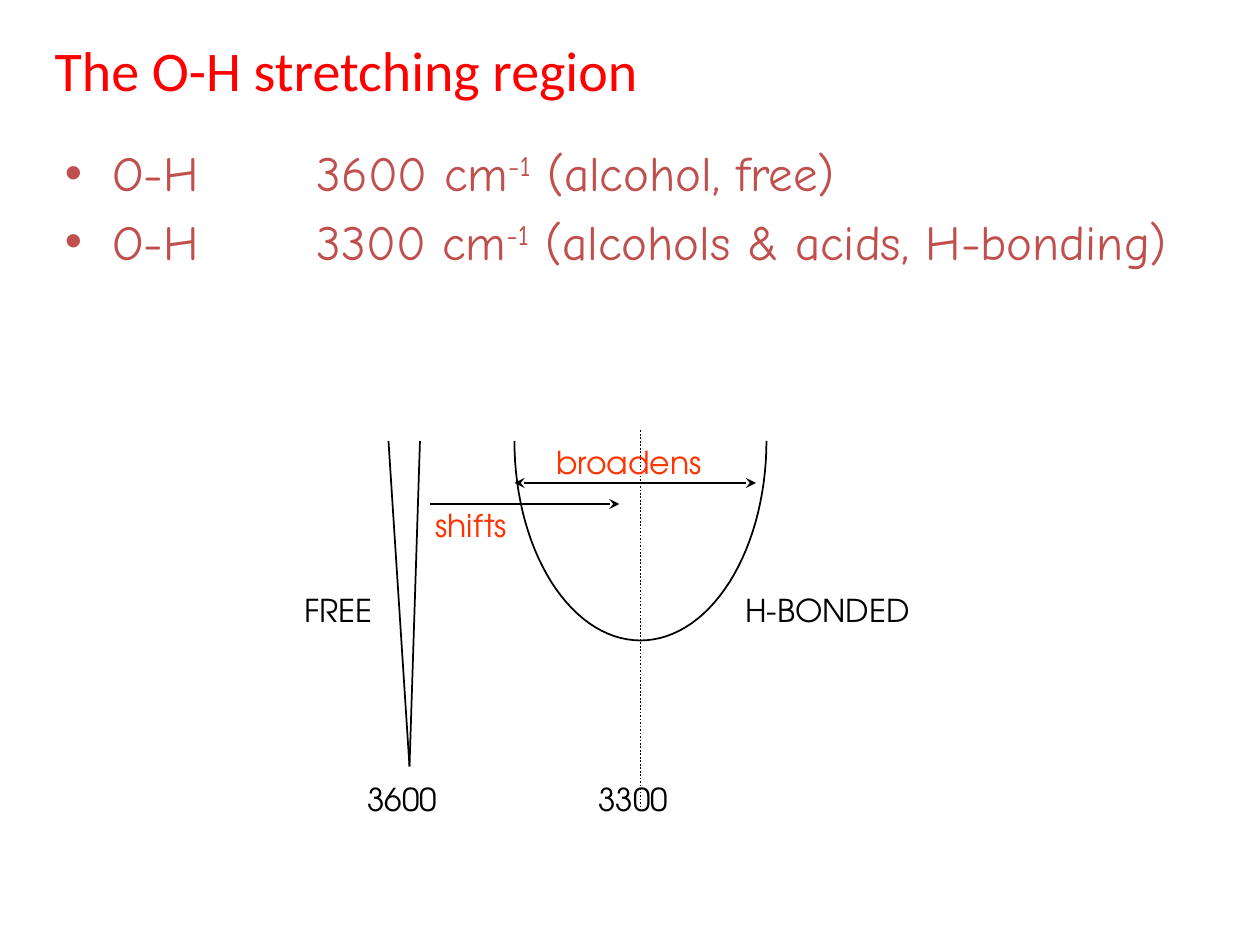
from dataclasses import dataclass
from math import cos, pi, sin

from lxml.etree import SubElement
from pptx import Presentation
from pptx.dml.color import RGBColor
from pptx.enum.dml import MSO_LINE_DASH_STYLE as Dash
from pptx.enum.shapes import MSO_CONNECTOR as Connector
from pptx.enum.text import MSO_ANCHOR as Anchor, PP_ALIGN as Align
from pptx.oxml.ns import qn
from pptx.util import Emu, Pt

PX = 7620  # 120 px to the inch

BLACK = RGBColor(0x00, 0x00, 0x00)
RED = RGBColor(0xFF, 0x00, 0x00)
ORANGE = RGBColor(0xFF, 0x33, 0x00)
BRICK = RGBColor(0xC0, 0x50, 0x4D)


@dataclass(frozen=True)
class Label:
    text: str
    x: int
    y: int
    w: int
    color: RGBColor = BLACK


@dataclass(frozen=True)
class Line:
    x1: int
    y1: int
    x2: int
    y2: int
    dash: Dash | None = None
    arrows: tuple[str, ...] = ()


@dataclass(frozen=True)
class Band:
    wavenumber: str
    note: str


LINES = [
    Line(370, 420, 390, 730),
    Line(390, 730, 400, 420),
    Line(610, 410, 610, 770, dash=Dash.ROUND_DOT),
    Line(410, 480, 590, 480, arrows=("tailEnd",)),
    Line(490, 460, 720, 460, arrows=("headEnd", "tailEnd")),
]
LABELS = [
    Label("3600", 338, 737, 96),
    Label("3300", 558, 737, 96),
    Label("H-BONDED", 698, 557, 190),
    Label("FREE", 278, 557, 104),
    Label("broadens", 518, 416, 163, ORANGE),
    Label("shifts", 403, 476, 103, ORANGE),
]
BANDS = [
    Band("3600", " (alcohol, free)"),
    Band("3300", " (alcohols & acids, H-bonding)"),
]


def px(*values: int) -> list[Emu]:
    return [Emu(v * PX) for v in values]


def add_text(p, text: str, *, font: str, size: int, color: RGBColor,
             raised: bool = False) -> None:
    r = p.add_run()
    r.text = text
    r.font.name, r.font.size = font, Pt(size)
    r.font.color.rgb = color
    if raised:
        r._r.get_or_add_rPr().set("baseline", "30000")


def style_bullet(p, indent: int, tab: int) -> None:
    """Give a paragraph a hanging bullet, 20% space before and one tab stop."""
    pPr = p._p.get_or_add_pPr()
    pPr.set("marL", str(indent * PX))
    pPr.set("indent", str(-indent * PX))
    before = SubElement(pPr, qn("a:spcBef"))
    SubElement(before, qn("a:spcPct"), val="20000")
    SubElement(pPr, qn("a:buFont"), typeface="Arial")
    SubElement(pPr, qn("a:buChar"), char="•")
    tabs = SubElement(pPr, qn("a:tabLst"))
    SubElement(tabs, qn("a:tab"), pos=str(tab * PX), algn="l")


def add_title(slide, text: str) -> None:
    s = slide.shapes.title
    s.left, s.top, s.width, s.height = px(40, 28, 689, 76)
    tf = s.text_frame
    tf.vertical_anchor = Anchor.TOP
    p = tf.paragraphs[0]
    p.alignment = Align.LEFT
    add_text(p, text, font="Calibri", size=32, color=RED)


def add_bands(slide, bands: list[Band]) -> None:
    tf = slide.shapes.add_textbox(*px(50, 130, 1120, 230)).text_frame
    tf.word_wrap = True
    style = dict(font="Comic Neue", size=28, color=BRICK)
    for i, band in enumerate(bands):
        p = tf.add_paragraph() if i else tf.paragraphs[0]
        style_bullet(p, indent=45, tab=240)
        add_text(p, f"O-H \t{band.wavenumber} cm", **style)
        add_text(p, "-1", raised=True, **style)
        add_text(p, band.note, **style)


def add_line(shapes, line: Line) -> None:
    s = shapes.add_connector(Connector.STRAIGHT,
                             *px(line.x1, line.y1, line.x2, line.y2))
    s.line.color.rgb, s.line.width = BLACK, Pt(1)
    if line.dash is not None:
        s.line.dash_style = line.dash
    for end in line.arrows:
        SubElement(s.line._get_or_add_ln(), qn(f"a:{end}"), type="stealth")
    SubElement(s._element.spPr, qn("a:effectLst"))


def add_broad_peak(shapes, cx: int, top: int, rx: int, ry: int,
                   steps: int = 60) -> None:
    """Draw the lower half of an ellipse as an open outline."""
    points = [((cx + rx * cos(pi * i / steps)) * PX,
               (top + ry * sin(pi * i / steps)) * PX)
              for i in range(steps + 1)]
    builder = shapes.build_freeform(*points[0])
    builder.add_line_segments(points[1:], close=False)
    s = builder.convert_to_shape()
    s.shadow.inherit = False
    s.fill.background()
    s.line.color.rgb, s.line.width = BLACK, Pt(1)


def add_label(shapes, label: Label) -> None:
    tf = shapes.add_textbox(*px(label.x, label.y, label.w, 48)).text_frame
    tf.word_wrap = False
    add_text(tf.paragraphs[0], label.text, font="TeX Gyre Adventor",
             size=18, color=label.color)


def main() -> None:
    prs = Presentation()
    prs.slide_width, prs.slide_height = px(1200, 900)
    slide = prs.slides.add_slide(prs.slide_layouts[5])
    add_title(slide, "The O-H stretching region")
    add_bands(slide, BANDS)
    diagram = slide.shapes.add_group_shape().shapes
    add_broad_peak(diagram, cx=610, top=420, rx=120, ry=190)
    for line in LINES:
        add_line(diagram, line)
    for label in LABELS:
        add_label(diagram, label)
    prs.save("out.pptx")


if __name__ == "__main__":
    main()
